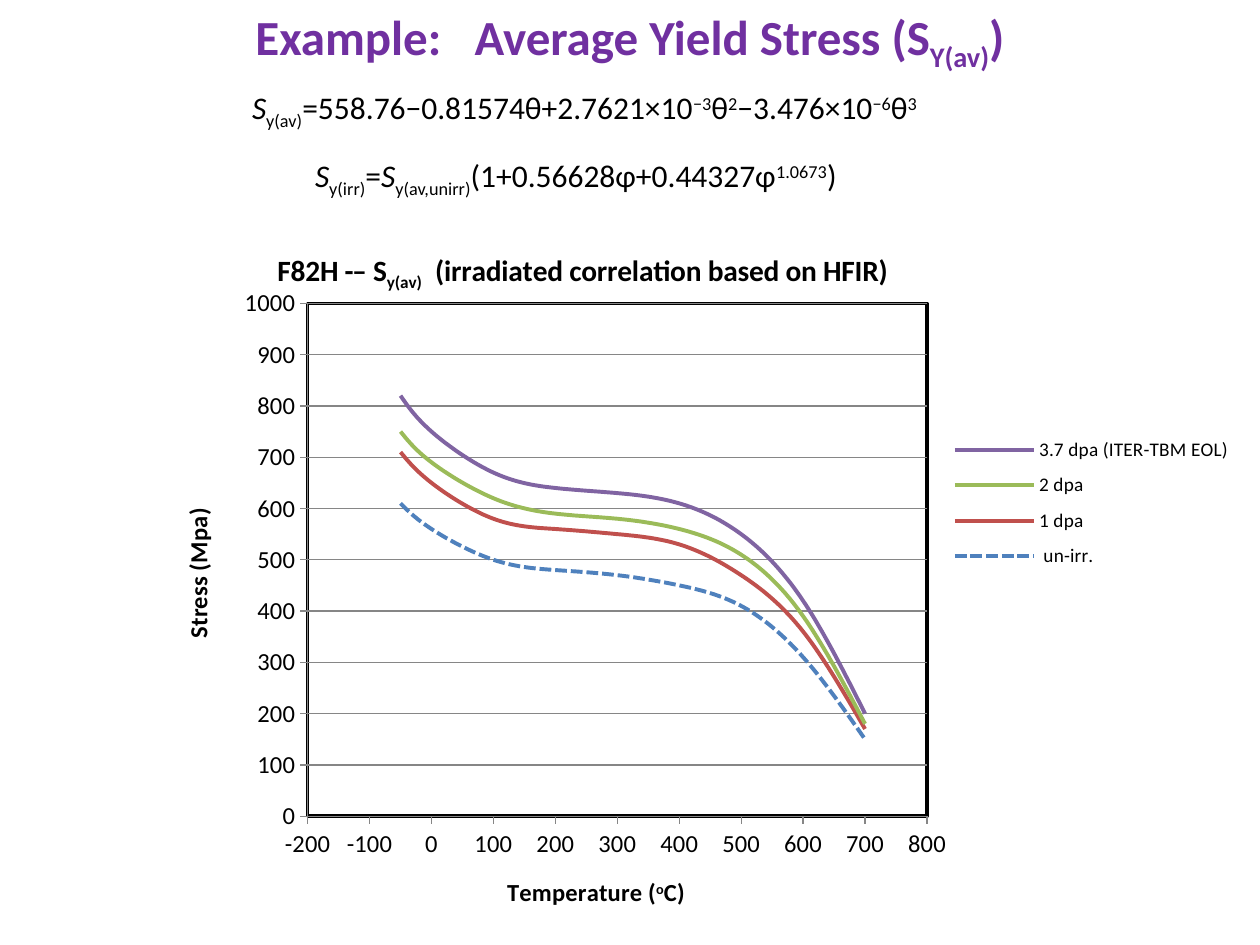
from lxml import etree
from pptx import Presentation
from pptx.chart.data import XyChartData
from pptx.dml.color import RGBColor
from pptx.enum.chart import XL_CHART_TYPE, XL_LEGEND_POSITION, XL_TICK_MARK
from pptx.enum.dml import MSO_LINE
from pptx.enum.text import MSO_ANCHOR, PP_ALIGN
from pptx.oxml import parse_xml
from pptx.oxml.ns import nsdecls, qn
from pptx.util import Pt

COLORS = {"title": "7030A0", "text": "000000", "grid": "868686",
          "3.7 dpa": "8064A2", "2 dpa": "9BBB59", "1 dpa": "C0504D", "unirradiated": "4F81BD"}
FONT = "Calibri"
SUB, SUP = -25, 30
NO_STYLE_NO_GRID = "{2D5ABB26-0587-4C30-8999-92F81FD0307C}"


def write(para, pieces, size, color="text", bold=False):
    """Add (text, baseline percent, italic) pieces as runs."""
    for text, baseline, italic in pieces:
        span = para.add_run()
        span.text = text
        span.font.name = FONT
        span.font.size = Pt(size)
        span.font.bold = bold
        span.font.italic = italic
        span.font.color.rgb = RGBColor.from_string(COLORS[color])
        if baseline:
            span._r.get_or_add_rPr().set("baseline", str(baseline * 1000))


def place(element, index, inner=False, **fractions):
    """Give a chart part a manual layout in fractions of the chart."""
    for old in element.findall(qn("c:layout")):
        element.remove(old)
    layout = parse_xml(f"<c:layout {nsdecls('c')}><c:manualLayout/></c:layout>")
    settings = {"layoutTarget": "inner"} if inner else {}
    settings.update(xMode="edge", yMode="edge", **fractions)
    for tag, value in settings.items():
        etree.SubElement(layout[0], qn(f"c:{tag}")).set("val", str(value))
    element.insert(index, layout)


deck = Presentation()
deck.slide_width, deck.slide_height = Pt(720), Pt(540)
page = deck.slides.add_slide(deck.slide_layouts[6])

# Stress chart
temperatures = [-50, 0, 100, 200, 300, 400, 500, 600, 700]
curves = [
    ("3.7 dpa (ITER-TBM EOL)", "3.7 dpa", [820, 750, 670, 640, 630, 610, 550, 420, 200]),
    ("2 dpa", "2 dpa", [750, 690, 620, 590, 580, 560, 510, 390, 180]),
    ("1 dpa", "1 dpa", [710, 650, 580, 560, 550, 530, 470, 360, 170]),
    (" un-irr.", "unirradiated", [610, 560, 500, 480, 470, 450, 410, 310, 150]),
]
data = XyChartData()
for name, _, stresses in curves:
    series = data.add_series(name)
    for temperature, stress in zip(temperatures, stresses):
        series.add_data_point(temperature, stress)
chart = page.shapes.add_chart(XL_CHART_TYPE.XY_SCATTER_SMOOTH_NO_MARKERS, Pt(63.36), Pt(137.52),
                              Pt(694.08), Pt(390.24), data).chart
chart.font.name = FONT
chart.font.size = Pt(14)
chart.font.color.rgb = RGBColor.from_string(COLORS["text"])
chart.plots[0].vary_by_categories = False
for series, (_, color, _) in zip(chart.plots[0].series, curves):
    series._element.get_or_add_smooth().set("val", "1")
    series.format.line.width = Pt(2.25)
    series.format.line.color.rgb = RGBColor.from_string(COLORS[color])
    if color == "unirradiated":
        series.format.line.dash_style = MSO_LINE.SQUARE_DOT

# Plot area with black frame
plot_area = chart._chartSpace.chart.plotArea
place(plot_area, 0, inner=True, x=0.162, y=0.092, w=0.51, h=0.751)
plot_area.append(parse_xml(
    f'<c:spPr {nsdecls("c", "a")}><a:noFill/><a:ln w="25400"><a:solidFill>'
    f'<a:srgbClr val="{COLORS["text"]}"/></a:solidFill></a:ln></c:spPr>'))

# Axes, meeting in the lower left corner
axes = [
    (chart.category_axis, -200, 800, [("Temperature (", 0, None), ("o", SUP, None), ("C)", 0, None)],
     0.323, 0.924),
    (chart.value_axis, 0, 1000, [("Stress (Mpa)", 0, None)], 0.054, 0.385),
]
for axis, low, high, pieces, left, top in axes:
    axis.minimum_scale, axis.maximum_scale, axis.major_unit = low, high, 100
    axis.crosses_at = low
    axis.major_tick_mark = XL_TICK_MARK.OUTSIDE
    axis.has_major_gridlines = axis is chart.value_axis
    axis.tick_labels.number_format = "0"
    axis.tick_labels.number_format_is_linked = False
    axis.format.line.color.rgb = RGBColor.from_string(COLORS["grid"])
    write(axis.axis_title.text_frame.paragraphs[0], pieces, 14, bold=True)
    place(axis.axis_title._element, 1, x=left, y=top)
chart.value_axis.has_major_gridlines = True
chart.value_axis.major_gridlines.format.line.color.rgb = RGBColor.from_string(COLORS["grid"])
stress_body = chart.value_axis.axis_title.text_frame._txBody.bodyPr
stress_body.set("rot", "-5400000")
stress_body.set("vert", "horz")

# Chart title and legend
chart.has_title = True
write(chart.chart_title.text_frame.paragraphs[0],
      [("F82H - ̶  S", 0, None), ("y(av)", SUB, None),
       ("  (irradiated correlation based on HFIR)", 0, None)], 16.8, bold=True)
place(chart.chart_title._element, 1, x=0.134, y=0.01)
chart.has_legend = True
chart.legend.position = XL_LEGEND_POSITION.RIGHT
chart.legend.include_in_layout = False
chart.legend.font.name = FONT
chart.legend.font.size = Pt(11)
place(chart.legend._element, 1, x=0.691, y=0.272, w=0.233, h=0.225)

# Slide title
box = page.shapes.add_textbox(Pt(0), Pt(0), Pt(720), Pt(48))
box.text_frame.word_wrap = True
box.text_frame.vertical_anchor = MSO_ANCHOR.MIDDLE
box.text_frame.margin_bottom = Pt(6)
para = box.text_frame.paragraphs[0]
para.alignment = PP_ALIGN.CENTER
write(para, [("Example:   Average Yield Stress (S", 0, None), ("Y(av)", SUB, None), (")", 0, None)],
      28, "title", True)

# Equations, each in a one-cell table without borders
equations = [
    ((144, 36, 420, 39.6),
     [("S", 0, True), ("y(av)", SUB, False), ("=558.76−0.81574θ+2.7621×10", 0, False),
      ("−3", SUP, False), ("θ", 0, False), ("2", SUP, False), ("−3.476×10", 0, False),
      ("−6", SUP, False), ("θ", 0, False), ("3", SUP, False)]),
    ((180, 84.24, 401.76, 30.24),
     [("S", 0, True), ("y(irr)", SUB, False), ("=", 0, False), ("S", 0, True),
      ("y(av,unirr)", SUB, False), ("(1+0.56628φ+0.44327φ", 0, False),
      ("1.0673", SUP, False), (")", 0, False)]),
]
for bounds, pieces in equations:
    table = page.shapes.add_table(1, 1, *map(Pt, bounds)).table
    table.first_row = table.horz_banding = False
    table._tbl.tblPr.find(qn("a:tableStyleId")).text = NO_STYLE_NO_GRID
    cell = table.cell(0, 0)
    cell.fill.background()
    cell.vertical_anchor = MSO_ANCHOR.BOTTOM
    cell.margin_left = cell.margin_right = cell.margin_top = cell.margin_bottom = Pt(0)
    write(cell.text_frame.paragraphs[0], pieces, 18)

deck.save("out.pptx")
